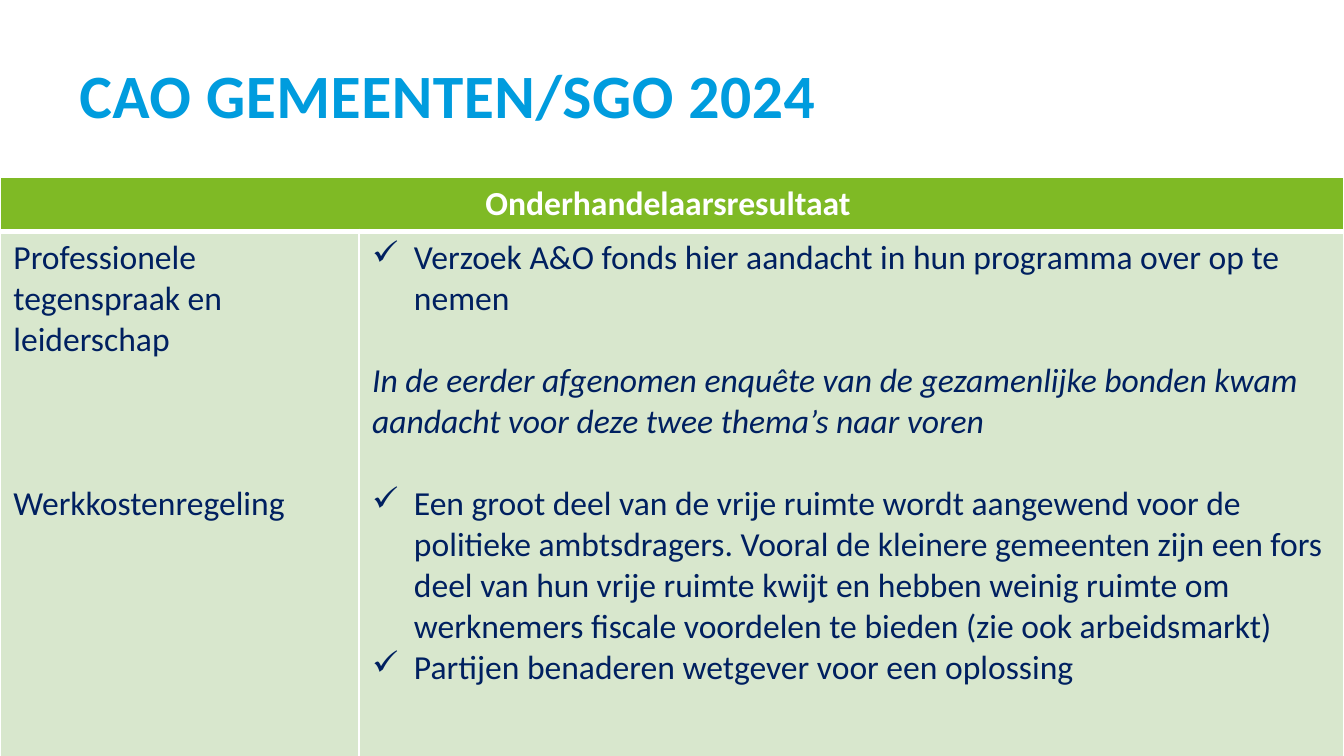
from dataclasses import dataclass

from pptx import Presentation
from pptx import util as u
from pptx.dml.color import RGBColor
from pptx.enum import text
from pptx.oxml import parse_xml
from pptx.oxml.ns import nsdecls


@dataclass(frozen=True)
class Theme:
    font: str = "Calibri"
    blue: str = "009CDE"
    navy: str = "002060"
    green: str = "7FBA25"
    pale: str = "D8E7CD"
    white: str = "FFFFFF"
    title_size: int = 33
    body_size: int = 18


theme = Theme()
LINE = 22  # height of one body line in points


def add_span(para, words, size, color, bold=False, italic=False):
    span = para.add_run()
    span.text = words
    span.font.name = theme.font
    span.font.size = u.Pt(size)
    span.font.color.rgb = RGBColor.from_string(color)
    span.font.bold = bold
    span.font.italic = italic
    return span


def style_cell(cell, fill, top, bottom):
    cell.fill.solid()
    cell.fill.fore_color.rgb = RGBColor.from_string(fill)
    properties = cell._tc.get_or_add_tcPr()
    for index, (side, width) in enumerate(
            [("L", 1), ("R", 1), ("T", top), ("B", bottom)]):
        properties.insert(index, parse_xml(
            f'<a:ln{side} {nsdecls("a")} w="{u.Pt(width)}"><a:solidFill>'
            f'<a:srgbClr val="{theme.white}"/></a:solidFill></a:ln{side}>'))


deck = Presentation()
deck.slide_width = u.Cm(25.4)
deck.slide_height = u.Cm(14.29)
page = deck.slides.add_slide(deck.slide_layouts[6])

# Title
box = page.shapes.add_textbox(u.Cm(1.5), u.Cm(0.89), u.Cm(20.24), u.Cm(1.57))
frame = box.text_frame
frame.word_wrap = True
frame.margin_left = frame.margin_right = frame.margin_top = frame.margin_bottom = 0
para = frame.paragraphs[0]
para.line_spacing = u.Pt(45)
span = add_span(para, "CAO GEMEENTEN/SGO 2024", theme.title_size, theme.blue, bold=True)
span.font._element.set("spc", "30")

# Table grid
table = page.shapes.add_table(
    2, 2, 0, u.Cm(3.35), u.Cm(25.4), u.Cm(11.23)).table
table.first_row = table.horz_banding = False
for column, width in zip(table.columns, (6.78, 18.62)):
    column.width = u.Cm(width)
for row, height in zip(table.rows, (0.97, 10.26)):
    row.height = u.Cm(height)
for column in range(2):
    style_cell(table.cell(0, column), theme.green, top=1, bottom=3)
    style_cell(table.cell(1, column), theme.pale, top=3, bottom=1)

# Header across both columns
header = table.cell(0, 0)
header.merge(table.cell(0, 1))
para = header.text_frame.paragraphs[0]
para.alignment = text.PP_ALIGN.CENTER
add_span(para, "Onderhandelaarsresultaat ", theme.body_size, theme.white, bold=True)

# Body: words, lines left open above, check mark (otherwise plain), italic
topics = [
    ("Professionele tegenspraak en leiderschap", 0, False, False),
    ("Werkkostenregeling", 3, False, False),
]
results = [
    ("Verzoek A&O fonds hier aandacht in hun programma over op te nemen",
     0, True, False),
    ("In de eerder afgenomen enquête van de gezamenlijke bonden kwam "
     "aandacht voor deze twee thema’s naar voren", 1, False, True),
    ("Een groot deel van de vrije ruimte wordt aangewend voor de politieke "
     "ambtsdragers. Vooral de kleinere gemeenten zijn een fors deel van hun "
     "vrije ruimte kwijt en hebben weinig ruimte om werknemers fiscale "
     "voordelen te bieden (zie ook arbeidsmarkt)", 1, True, False),
    ("Partijen benaderen wetgever voor een oplossing", 0, True, False),
]
for column, entries in enumerate((topics, results)):
    frame = table.cell(1, column).text_frame
    for index, (words, gap, checked, italic) in enumerate(entries):
        para = frame.add_paragraph() if index else frame.paragraphs[0]
        if gap:
            para.space_before = u.Pt(gap * LINE)
        if checked:
            properties = para._p.get_or_add_pPr()
            properties.set("marL", str(u.Cm(0.79)))
            properties.set("indent", str(-u.Cm(0.79)))
            properties.append(parse_xml(f'<a:buChar {nsdecls("a")} char="✓"/>'))
        add_span(para, words, theme.body_size, theme.navy, italic=italic)

deck.save("out.pptx")
